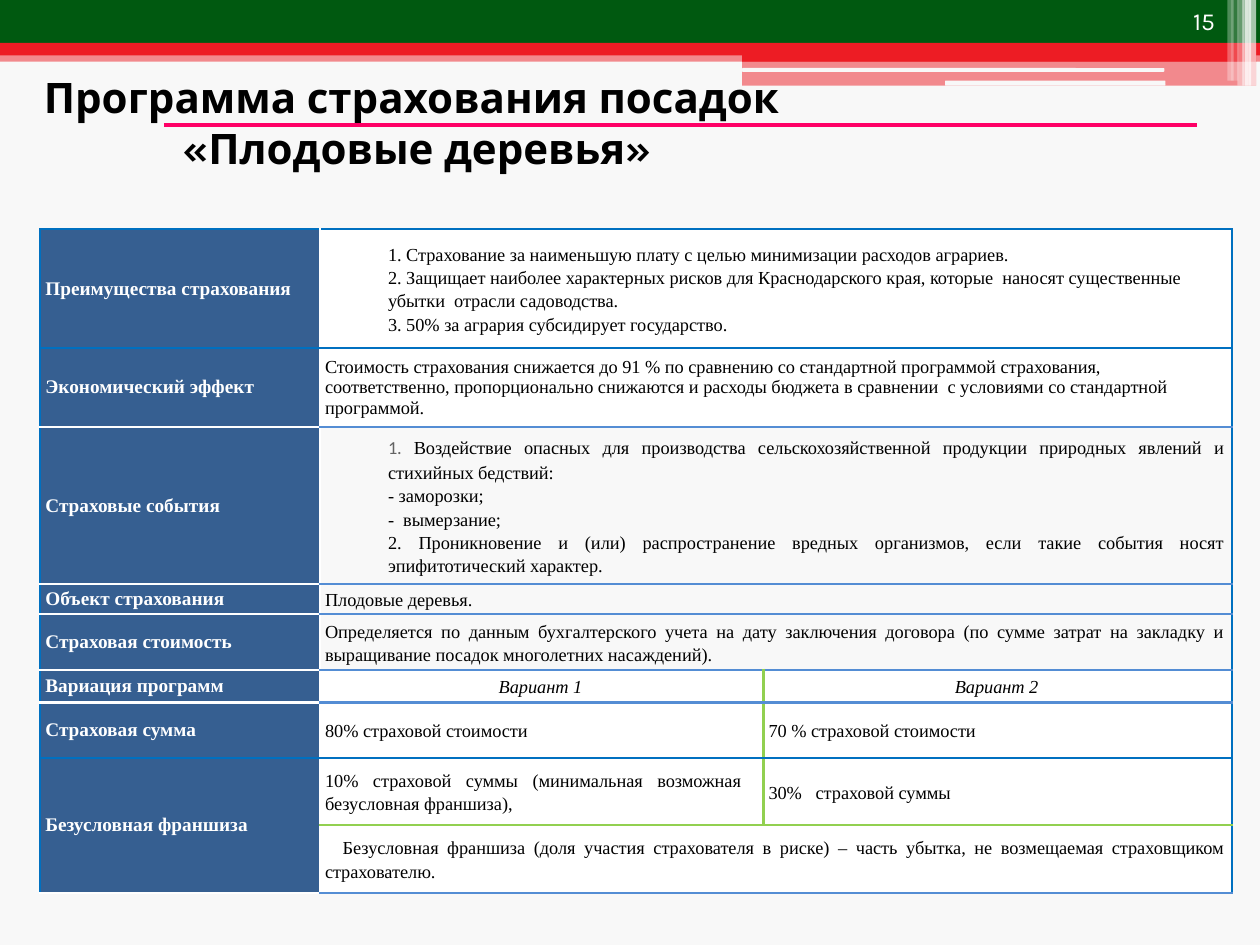
"""Builds the slide about the insurance programme for fruit tree plantings."""
from dataclasses import dataclass

from lxml import etree
from pptx import Presentation
from pptx.dml.color import RGBColor
from pptx.enum.shapes import MSO_CONNECTOR, MSO_SHAPE
from pptx.enum.text import MSO_ANCHOR, PP_ALIGN
from pptx.oxml.ns import qn
from pptx.util import Inches, Pt


@dataclass(frozen=True)
class Theme:
    paper: str = "F8F8F8"
    white: str = "FFFFFF"
    black: str = "000000"
    gray: str = "636363"
    green: str = "005910"
    red: str = "ED1C24"
    pink: str = "FF0066"
    label: str = "365F91"
    blue: str = "0070C0"
    light_blue: str = "548DD4"
    lime: str = "92D050"
    heading_font: str = "Karla"
    table_font: str = "Times New Roman"
    number_font: str = "Calibri"
    title_size: float = 24
    page_size: float = 14
    label_size: float = 11
    body_size: float = 10.5
    border: float = 1.5
    rule: float = 2.5


T = Theme()
LEFT, CENTER, JUSTIFY = PP_ALIGN.LEFT, PP_ALIGN.CENTER, PP_ALIGN.JUSTIFY


class Deck:
    def __init__(self, prs, theme):
        self.theme = theme
        self.s = prs.slides.add_slide(prs.slide_layouts[6])
        fill = self.s.background.fill
        fill.solid()
        fill.fore_color.rgb = RGBColor.from_string(theme.paper)

    def box(self, x, y, w, h, color, alpha=100, shape=MSO_SHAPE.RECTANGLE):
        sp = self.s.shapes.add_shape(shape, Inches(x), Inches(y), Inches(w), Inches(h))
        sp.shadow.inherit = False
        sp.line.fill.background()
        sp.fill.solid()
        sp.fill.fore_color.rgb = RGBColor.from_string(color)
        if alpha < 100:
            clr = sp.fill._xPr.find(".//" + qn("a:srgbClr"))
            etree.SubElement(clr, qn("a:alpha"), val=str(alpha * 1000))

    def style(self, p, size, color, font, bold=False, italic=False):
        for r in p.runs:
            r.font.size = Pt(size)
            r.font.name = font
            r.font.bold = bold
            r.font.italic = italic
            r.font.color.rgb = RGBColor.from_string(color)

    def text(self, x, y, w, h, text, size, color, bold=False, align=LEFT):
        tf = self.s.shapes.add_textbox(Inches(x), Inches(y), Inches(w), Inches(h)).text_frame
        tf.word_wrap = True
        tf.text = text
        for p in tf.paragraphs:
            p.alignment = align
            self.style(p, size, color, self.theme.heading_font, bold)

    def line(self, x1, y1, x2, y2, color, width):
        ln = self.s.shapes.add_connector(
            MSO_CONNECTOR.STRAIGHT, Inches(x1), Inches(y1), Inches(x2), Inches(y2))
        ln.line.color.rgb = RGBColor.from_string(color)
        ln.line.width = Pt(width)
        etree.SubElement(ln._element.spPr, qn("a:effectLst"))

    def table(self, x, y, cols, rows):
        w, h = Inches(sum(cols)), Inches(sum(rows))
        tbl = self.s.shapes.add_table(
            len(rows), len(cols), Inches(x), Inches(y), w, h).table
        tbl.first_row = tbl.horz_banding = False
        for col, width in zip(tbl.columns, cols):
            col.width = Inches(width)
        for row, height in zip(tbl.rows, rows):
            row.height = Inches(height)
        return tbl

    def borders(self, cell, left, right, top, bottom):
        tcPr = cell._tc.get_or_add_tcPr()
        sides = zip(("lnL", "lnR", "lnT", "lnB"), (left, right, top, bottom))
        for i, (tag, color) in enumerate(sides):
            ln = etree.Element(qn("a:" + tag), w=str(Pt(self.theme.border)))
            fill = etree.SubElement(ln, qn("a:solidFill"))
            etree.SubElement(fill, qn("a:srgbClr"), val=color)
            tcPr.insert(i, ln)

    def cell(self, cell, text, fill, size, color, align=LEFT, spacing=1.0,
             bold=False, italic=False, margin=0, indent=0):
        cell.margin_left, cell.margin_right = Inches(0.04), Inches(0.06)
        cell.margin_top = cell.margin_bottom = Inches(0.02)
        cell.vertical_anchor = MSO_ANCHOR.MIDDLE
        if fill:
            cell.fill.solid()
            cell.fill.fore_color.rgb = RGBColor.from_string(fill)
        else:
            cell.fill.background()
        cell.text_frame.text = text
        for p in cell.text_frame.paragraphs:
            pPr = p._p.get_or_add_pPr()
            pPr.set("marL", str(Inches(margin)))
            pPr.set("indent", str(Inches(indent)))
            p.alignment = align
            p.line_spacing = spacing
            self.style(p, size, color, self.theme.table_font, bold, italic)


COLS = [2.22, 3.52, 3.72]
HEIGHTS = [0.94, 0.63, 1.24, 0.24, 0.44, 0.26, 0.44, 0.53, 0.54]
LABELS = ["Преимущества страхования", "Экономический эффект", "Страховые события",
          "Объект страхования", "Страховая стоимость", "Вариация программ",
          "Страховая сумма", "Безусловная франшиза", ""]
BODY = [
    (["1. Страхование за наименьшую плату с целью минимизации расходов аграриев.\n"
      "2. Защищает наиболее характерных рисков для Краснодарского края, которые  наносят "
      "существенные убытки  отрасли садоводства.\n"
      "3. 50% за агрария субсидирует государство."], dict(align=LEFT, margin=0.5)),
    (["Стоимость страхования снижается до 91 % по сравнению со стандартной программой "
      "страхования, соответственно, пропорционально снижаются и расходы бюджета в сравнении  "
      "с условиями со стандартной программой."], dict(align=LEFT, spacing=1.0)),
    (["Воздействие опасных для производства сельскохозяйственной продукции природных явлений "
      "и стихийных бедствий:\n- заморозки;\n-  вымерзание;\n"
      "2. Проникновение и (или) распространение вредных организмов, если такие события носят "
      "эпифитотический характер."], dict(margin=0.5, fill=None)),
    (["Плодовые деревья."], dict(fill=None)),
    (["Определяется по данным бухгалтерского учета на дату заключения договора (по сумме "
      "затрат на закладку и выращивание посадок многолетних насаждений)."], dict(fill=None)),
    (["Вариант 1", "Вариант 2"], dict(align=CENTER, italic=True)),
    (["80% страховой стоимости", "70 % страховой стоимости"], {}),
    (["10% страховой суммы (минимальная возможная  безусловная франшиза),",
      "30%   страховой суммы"], {}),
    (["Безусловная франшиза (доля участия страхователя в риске) – часть убытка, "
      "не возмещаемая страховщиком страхователю."], dict(indent=0.14)),
]
LABEL_RULES = [T.blue] * 2 + [T.white] * 5 + [T.blue] + [T.white] * 2
BODY_RULES = [T.blue] * 2 + [T.light_blue] * 5 + [T.blue, T.lime, T.light_blue]


def draw_header(deck):
    """Draws the coloured bands, the streaks at the right and the title."""
    deck.box(0, 0.4, 10, 0.09, T.red, 50)
    deck.box(0, 0, 10, 0.34, T.green)
    deck.box(0, 0.34, 10, 0.1, T.red)
    deck.box(5.89, 0.39, 4.08, 0.1, T.red)
    deck.box(5.89, 0.48, 4.08, 0.2, T.red, 50)
    deck.box(5.89, 0.54, 3.35, 0.03, T.paper, shape=MSO_SHAPE.ROUNDED_RECTANGLE)
    deck.box(7.5, 0.64, 1.75, 0.04, T.paper, shape=MSO_SHAPE.ROUNDED_RECTANGLE)
    for x, w, h, alpha in [(9.91, 0.06, 0.68, 65), (9.88, 0.05, 0.68, 65),
                           (9.86, 0.05, 0.68, 60), (9.82, 0.05, 0.68, 40),
                           (9.77, 0.06, 0.64, 20), (9.74, 0.05, 0.64, 30)]:
        deck.box(x, 0, w, h, T.white, alpha)
    deck.text(9.37, 0, 0.51, 0.28, "15", T.page_size, T.white)
    deck.text(-1.22, 0.52, 9.06, 1.31, "Программа страхования посадок \n«Плодовые деревья»",
              T.title_size, T.black, bold=True, align=CENTER)
    deck.line(1.3, 0.99, 9.5, 0.99, T.pink, T.rule)


def draw_table(deck):
    """Fills the table of programme terms."""
    tbl = deck.table(0.32, 1.82, COLS, HEIGHTS)
    for i, (label, (texts, options)) in enumerate(zip(LABELS, BODY)):
        deck.cell(tbl.cell(i, 0), label, T.label, T.label_size, T.white, bold=True)
        deck.borders(tbl.cell(i, 0), T.blue, T.white, *LABEL_RULES[i:i + 2])
        split = T.lime if len(texts) == 2 else T.blue
        style = dict(fill=T.white, align=JUSTIFY, spacing=1.15) | options
        for j, text in enumerate(texts, 1):
            deck.cell(tbl.cell(i, j), text, size=T.body_size, color=T.black, **style)
        deck.borders(tbl.cell(i, 1), T.white, split, *BODY_RULES[i:i + 2])
        deck.borders(tbl.cell(i, 2), split, T.blue, *BODY_RULES[i:i + 2])
        if len(texts) == 1:
            tbl.cell(i, 1).merge(tbl.cell(i, 2))
    tbl.cell(7, 0).merge(tbl.cell(8, 0))
    p = tbl.cell(2, 1).text_frame.paragraphs[0]
    event = p.text
    p.text = "1. "
    deck.style(p, T.body_size, T.gray, T.number_font)
    r = p.add_run()
    r.text = event
    r.font.size, r.font.name = Pt(T.body_size), T.table_font
    r.font.color.rgb = RGBColor.from_string(T.black)


if __name__ == "__main__":
    prs = Presentation()
    prs.slide_width, prs.slide_height = Inches(10), Inches(7.5)
    deck = Deck(prs, T)
    draw_header(deck)
    draw_table(deck)
    prs.save("out.pptx")
